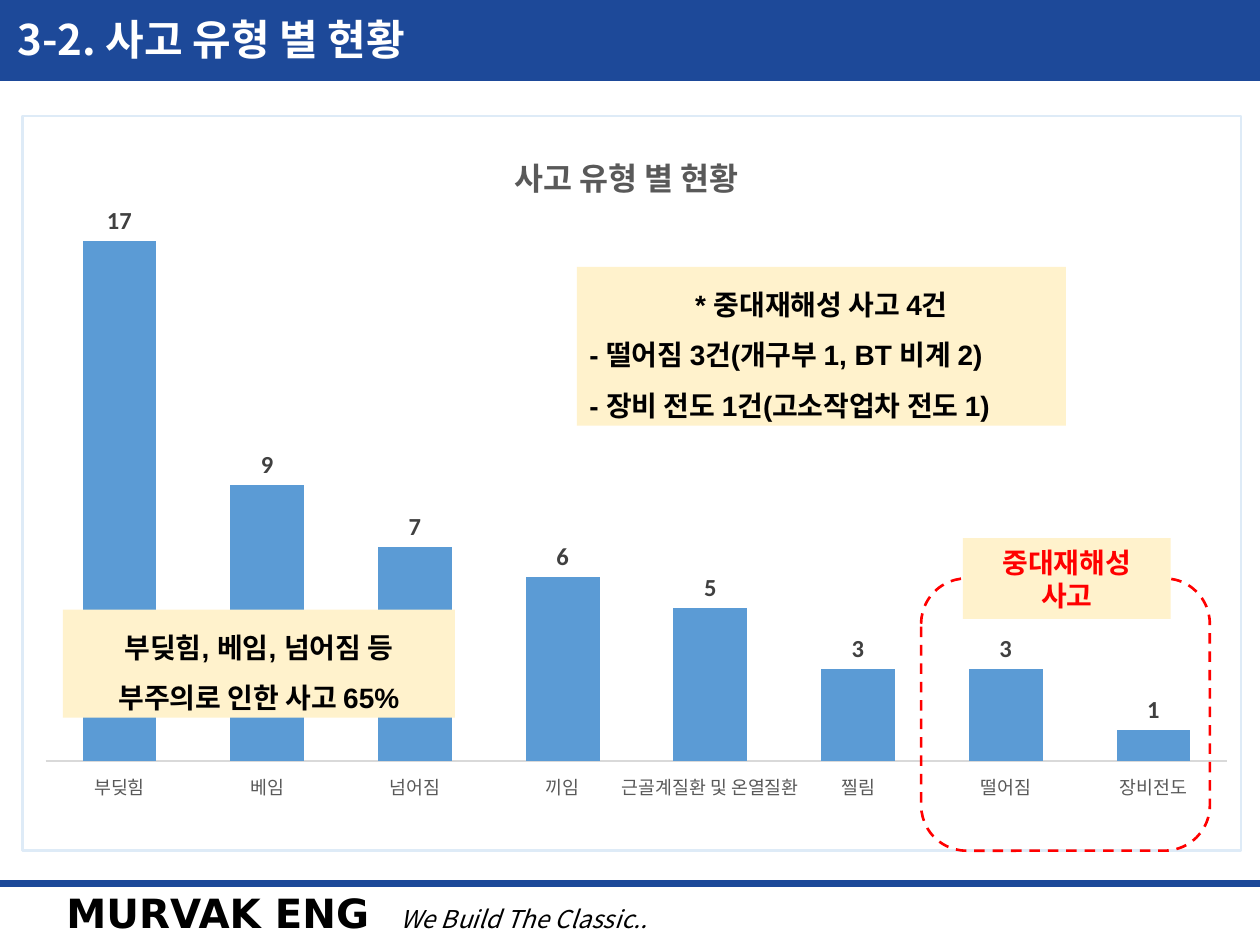
from lxml import etree
from pptx import Presentation
from pptx.chart.data import CategoryChartData
from pptx.dml.color import RGBColor
from pptx.enum.chart import XL_CHART_TYPE, XL_LABEL_POSITION, XL_TICK_LABEL_POSITION, XL_TICK_MARK
from pptx.enum.dml import MSO_LINE
from pptx.enum.shapes import MSO_CONNECTOR, MSO_SHAPE
from pptx.enum.text import MSO_ANCHOR, MSO_AUTO_SIZE, PP_ALIGN
from pptx.oxml.ns import qn
from pptx.util import Cm, Pt

RECTANGLE, ROUNDED = MSO_SHAPE.RECTANGLE, MSO_SHAPE.ROUNDED_RECTANGLE
LEFT, CENTER = PP_ALIGN.LEFT, PP_ALIGN.CENTER
TOP, MIDDLE = MSO_ANCHOR.TOP, MSO_ANCHOR.MIDDLE
KOREAN = "Noto Sans CJK KR"
COLORS = {name: RGBColor.from_string(value) for name, value in {
    "navy": "1D4999", "frame": "DEEBF7", "cream": "FFF2CC", "red": "FF0000",
    "bar": "5B9BD5", "axis": "D9D9D9", "gray": "595959", "label": "404040",
    "black": "000000", "white": "FFFFFF",
}.items()}


def style_font(font, name, size, color, bold=False, italic=False):
    """Set the Latin font and its look, with the Korean font for Hangul."""
    font.name, font.size, font.bold, font.italic = name, Pt(size), bold, italic
    font.color.rgb = COLORS[color]
    etree.SubElement(font._element, qn("a:ea")).set("typeface", KOREAN)


def add_box(kind, left, top, width, height, fill=None, line=None, line_width=1.5):
    shape = slide.shapes.add_shape(kind, Cm(left), Cm(top), Cm(width), Cm(height))
    shape.shadow.inherit = False
    if fill:
        shape.fill.solid()
        shape.fill.fore_color.rgb = COLORS[fill]
    else:
        shape.fill.background()
    if line:
        shape.line.color.rgb = COLORS[line]
        shape.line.width = Pt(line_width)
    else:
        shape.line.fill.background()
    return shape


presentation = Presentation()
presentation.slide_width, presentation.slide_height = Cm(25.4), Cm(19.05)
slide = presentation.slides.add_slide(presentation.slide_layouts[5])

# Frame, header band and footer rule
add_box(RECTANGLE, 0.46, 2.34, 24.56, 14.81, line="frame")
add_box(RECTANGLE, 0, 0, 25.4, 1.63, fill="navy", line="navy", line_width=0.75)
rule = slide.shapes.add_connector(MSO_CONNECTOR.STRAIGHT, 0, Cm(17.81), Cm(25.4), Cm(17.81))
rule.line.color.rgb = COLORS["navy"]
rule.line.width = Pt(4.5)
etree.SubElement(rule._element.spPr, qn("a:effectLst"))

# Footer
footer = slide.shapes.add_textbox(Cm(1.09), Cm(17.98), Cm(20.78), Cm(1.04))
footer.text_frame.word_wrap = True
footer.text_frame.vertical_anchor = TOP
paragraph = footer.text_frame.paragraphs[0]
paragraph.text = "MURVAK ENG\t"
paragraph.line_spacing = 0.8
tabs = etree.SubElement(paragraph._p.get_or_add_pPr(), qn("a:tabLst"))
etree.SubElement(tabs, qn("a:tab"), pos=str(Cm(6.73)), algn="l")
style_font(paragraph.runs[0].font, "DejaVu Sans", 23, "black", bold=True)
slogan = paragraph.add_run()
slogan.text = "We Build The Classic.."
style_font(slogan.font, KOREAN, 14, "black", italic=True)

# Title, brought in front of the header band
title = slide.shapes.title
slide.shapes._spTree.append(title._element)
title.left, title.top, title.width, title.height = Cm(0.1), Cm(0.15), Cm(9.27), Cm(1.27)
title.text_frame.text = "3-2. 사고 유형 별 현황"
title.text_frame.word_wrap = False
title.text_frame.auto_size = MSO_AUTO_SIZE.NONE
title.text_frame.vertical_anchor = MIDDLE
paragraph = title.text_frame.paragraphs[0]
paragraph.alignment = LEFT
style_font(paragraph.runs[0].font, KOREAN, 24, "white", bold=True)

# Accident chart
chart_data = CategoryChartData()
chart_data.categories = ["부딪힘", "베임", "넘어짐", "끼임", "근골계질환 및 온열질환",
                         "찔림", "떨어짐", "장비전도"]
chart_data.add_series("Series 1", [17, 9, 7, 6, 5, 3, 3, 1])
chart = slide.shapes.add_chart(XL_CHART_TYPE.COLUMN_CLUSTERED, Cm(0.43), Cm(2.31),
                               Cm(24.56), Cm(14.81), chart_data).chart
style_font(chart.font, "Calibri", 10, "black")
chart.has_legend = False
chart.has_title = True
chart.chart_title.text_frame.text = "사고 유형 별 현황"
style_font(chart.chart_title.text_frame.paragraphs[0].runs[0].font, "Calibri", 18, "gray", bold=True)

plot = chart.plots[0]
plot.gap_width, plot.overlap = 100, -27
plot.vary_by_categories = False
bars = plot.series[0]
bars.format.fill.solid()
bars.format.fill.fore_color.rgb = COLORS["bar"]
plot.has_data_labels = True
labels = plot.data_labels
labels.show_value = True
labels.position = XL_LABEL_POSITION.OUTSIDE_END
style_font(labels.font, "Calibri", 14, "label", bold=True)

value_axis, category_axis = chart.value_axis, chart.category_axis
value_axis.visible = False
value_axis.has_major_gridlines = False
value_axis.minimum_scale, value_axis.maximum_scale = 0, 18
category_axis.major_tick_mark = XL_TICK_MARK.NONE
category_axis.tick_label_position = XL_TICK_LABEL_POSITION.LOW
category_axis.format.line.color.rgb = COLORS["axis"]
category_axis.format.line.width = Pt(0.75)
style_font(category_axis.tick_labels.font, "Calibri", 10.5, "gray")

# Manual places of the chart title and the plot, as fractions of the chart
layouts = {
    "c:title": {"xMode": "edge", "yMode": "edge", "x": 0.4, "y": 0.04},
    "c:plotArea": {"layoutTarget": "inner", "xMode": "edge", "yMode": "edge",
                   "x": 0.02, "y": 0.13, "w": 0.97, "h": 0.75},
}
for tag, settings in layouts.items():
    parent = chart._chartSpace.chart.find(qn(tag))
    layout = parent.find(qn("c:layout"))
    if layout is None:
        layout = etree.Element(qn("c:layout"))
        parent.insert(0, layout)
    manual = etree.SubElement(layout, qn("c:manualLayout"))
    for name, value in settings.items():
        etree.SubElement(manual, qn(f"c:{name}")).set("val", str(value))

# Dashed outline around the serious accidents
outline = add_box(ROUNDED, 18.57, 11.66, 5.82, 5.49, line="red")
outline.line.dash_style = MSO_LINE.DASH

# Callouts: place, font, colour, line spacing, side inset, lines with alignment
callouts = [
    ((19.41, 10.85, 4.19, 1.63), "Calibri", "red", 1, 0.1,
     [("중대재해성", CENTER), ("사고", CENTER)]),
    ((11.63, 5.38, 9.86, 3.2), "Arial", "black", 1.5, 0.25,
     [("* 중대재해성 사고 4건", CENTER),
      ("- 떨어짐 3건(개구부 1, BT 비계 2)", LEFT),
      ("- 장비 전도 1건(고소작업차 전도 1)", LEFT)]),
    ((1.27, 12.29, 7.9, 2.18), "Arial", "black", 1.5, 0.25,
     [("부딪힘, 베임, 넘어짐 등", CENTER), ("부주의로 인한 사고 65%", CENTER)]),
]
for place, font_name, color, spacing, inset, lines in callouts:
    text_frame = add_box(RECTANGLE, *place, fill="cream").text_frame
    text_frame.word_wrap = True
    text_frame.vertical_anchor = MIDDLE
    text_frame.margin_left = text_frame.margin_right = Cm(inset)
    text_frame.text = "\n".join(text for text, _ in lines)
    for paragraph, (_, alignment) in zip(text_frame.paragraphs, lines):
        paragraph.alignment = alignment
        paragraph.line_spacing = spacing
        style_font(paragraph.runs[0].font, font_name, 16, color, bold=True)

presentation.save("out.pptx")
